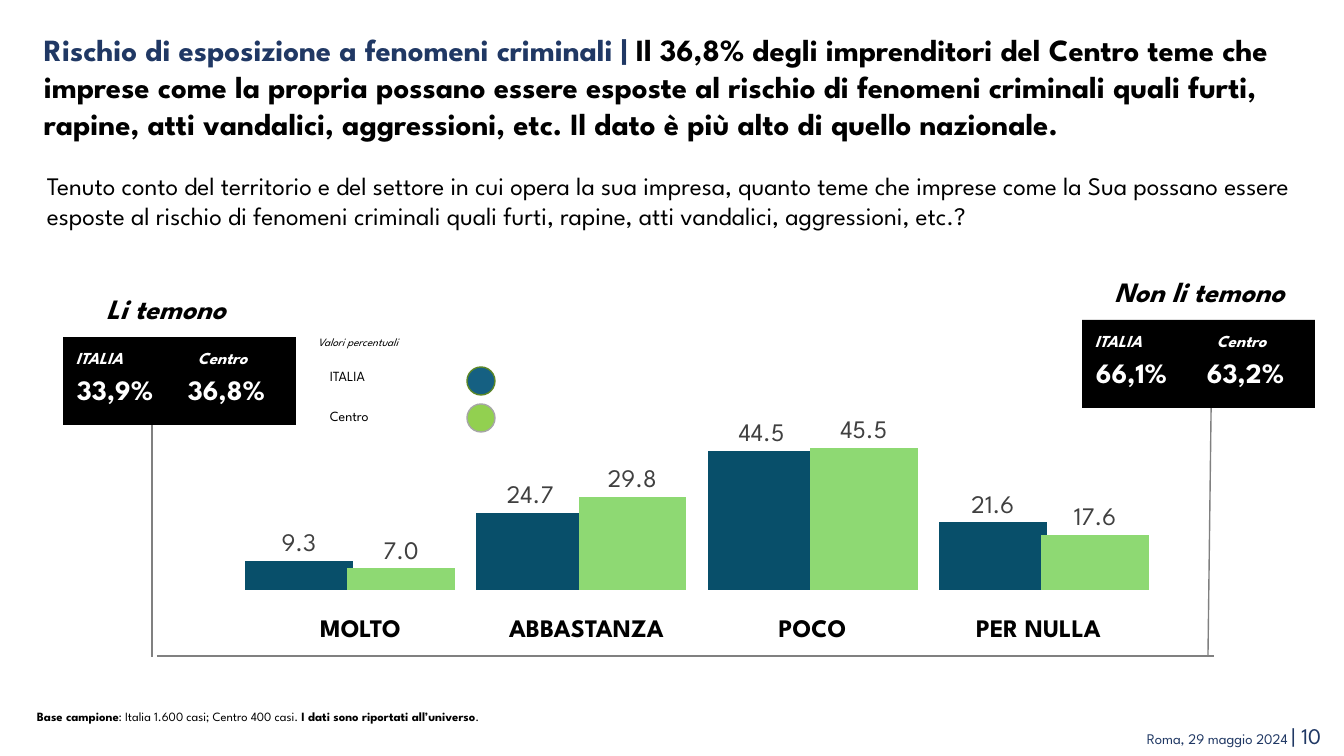
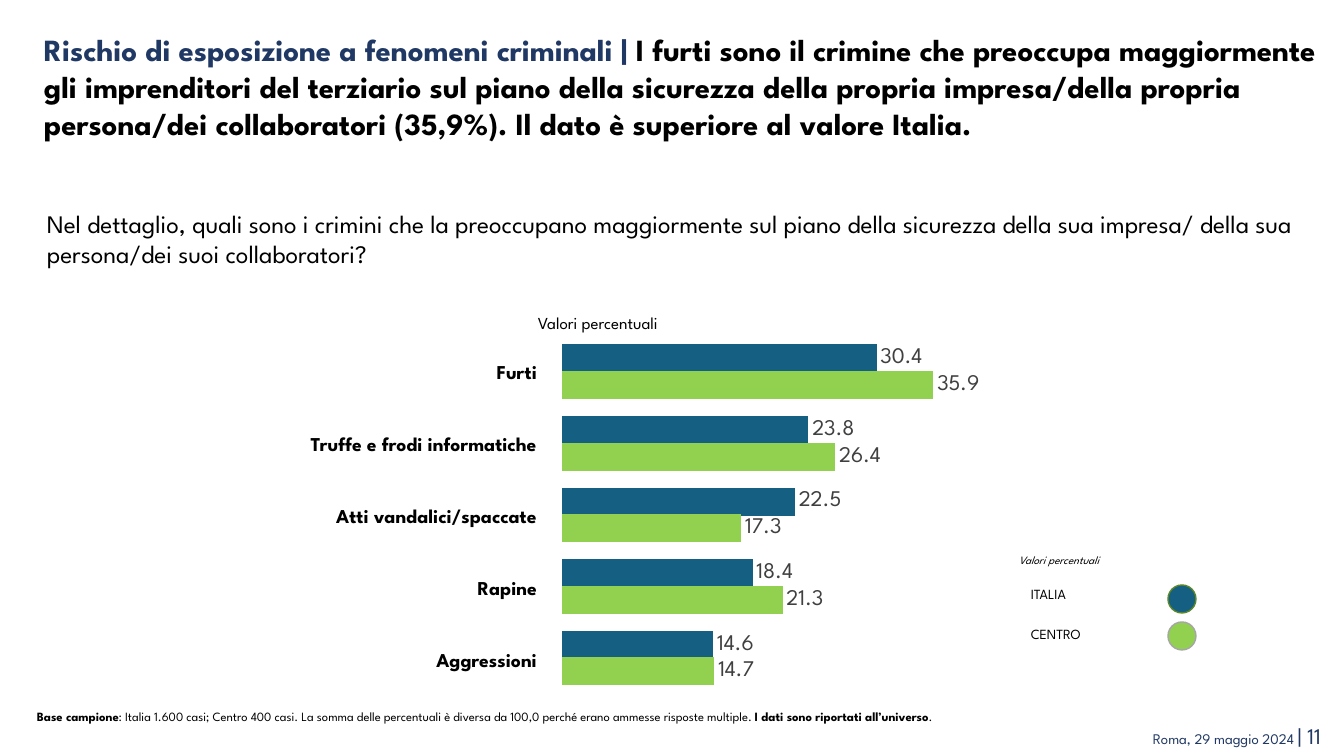
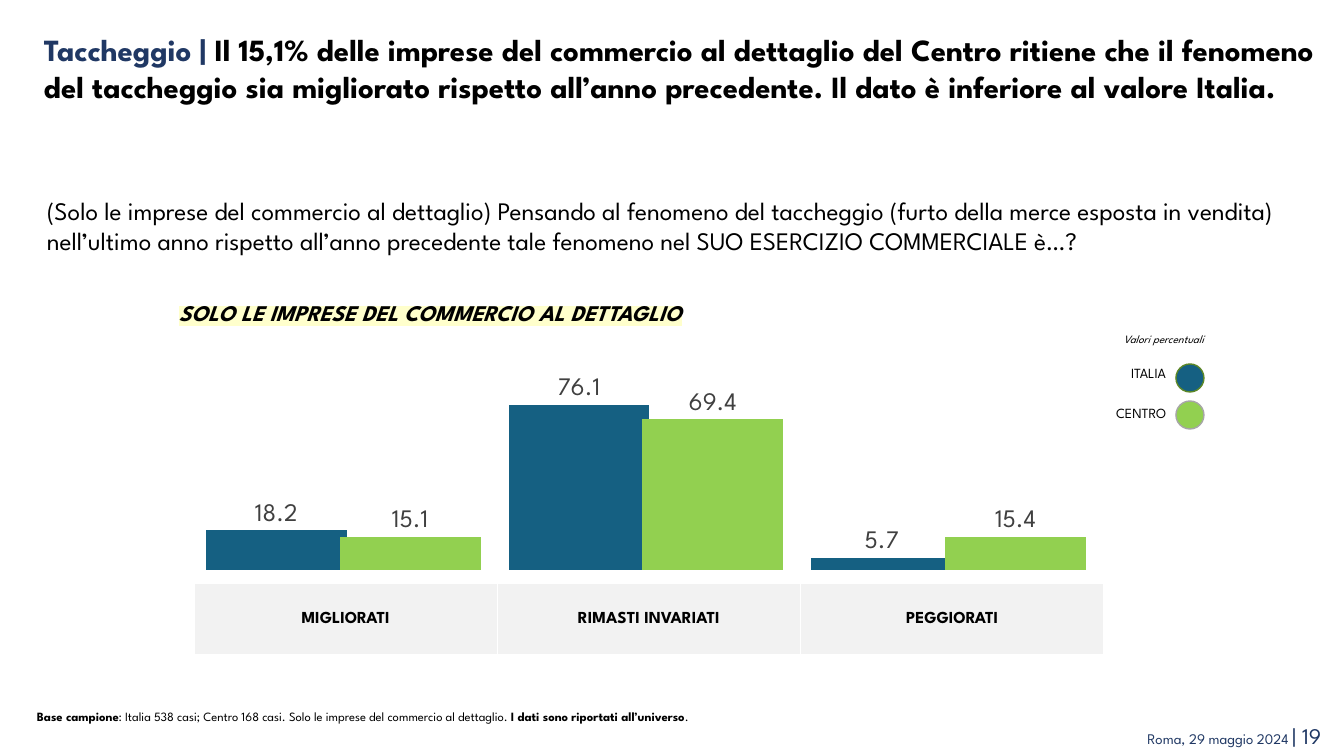
from dataclasses import dataclass

from lxml.etree import SubElement
from pptx import Presentation
from pptx.chart.data import CategoryChartData
from pptx.dml.color import RGBColor
from pptx.enum.chart import XL_CHART_TYPE as ChartType, XL_LABEL_POSITION as LabelPosition
from pptx.enum.shapes import MSO_CONNECTOR as Connector, MSO_SHAPE as Shape
from pptx.enum.text import MSO_ANCHOR as Anchor, PP_ALIGN as Align
from pptx.oxml.ns import qn
from pptx.util import Pt

EMU_PER_PX = 914400 / 100.8


def px(*lengths):
    return [round(length * EMU_PER_PX) for length in lengths]


@dataclass(frozen=True)
class Theme:
    font: str = "League Spartan"
    chart_font: str = "Arial"
    black: str = "000000"
    white: str = "FFFFFF"
    navy: str = "203864"
    rule: str = "808080"
    blue: str = "156082"
    green: str = "92D050"
    deep_blue: str = "084F6A"
    soft_green: str = "8ED973"
    blue_edge: str = "5C8727"
    green_edge: str = "A6A6A6"
    value: str = "404040"
    panel: str = "F2F2F2"
    highlight: str = "FFFFCC"
    title: float = 22
    figure: float = 20
    body: float = 18
    page: float = 16
    row: float = 14
    label: float = 12
    date: float = 10.5
    legend: float = 10
    note: float = 9
    caption: float = 8


class Deck:
    def __init__(self, theme):
        self.theme = theme
        self.presentation = Presentation()
        self.presentation.slide_width, self.presentation.slide_height = px(1344, 756)
        self.slide = None

    # Text
    def style(self, font, size=None, color=None, bold=None, italic=None, name=None):
        if size:
            font.size = Pt(size)
        if color:
            font.color.rgb = RGBColor.from_string(color)
        if bold is not None:
            font.bold = bold
        if italic is not None:
            font.italic = italic
        if name:
            font.name = name

    def fill_text(self, frame, runs, size, color=None, bold=False, italic=False,
                  align=Align.LEFT, spacing=None):
        """Runs are a string or a list of (text, style changes)."""
        paragraph = frame.paragraphs[0]
        paragraph.alignment = align
        if spacing:
            paragraph.line_spacing = spacing
        self.style(paragraph.font, size, color or self.theme.black, bold, italic,
                   self.theme.font)
        for words, changes in [(runs, {})] if isinstance(runs, str) else runs:
            run = paragraph.add_run()
            run.text = words
            self.style(run.font, **changes)
        return paragraph

    def text(self, box, runs, size, insets=None, **look):
        frame = self.slide.shapes.add_textbox(*px(*box)).text_frame
        frame.word_wrap = True
        if insets:
            self.set_insets(frame, *insets)
        return self.fill_text(frame, runs, size, **look)

    def set_insets(self, holder, across, down):
        holder.margin_left = holder.margin_right = px(across)[0]
        holder.margin_top = holder.margin_bottom = px(down)[0]

    def highlighted(self, box, words, size):
        paragraph = self.text(box, words, size, bold=True, italic=True)
        properties = paragraph.runs[0]._r.get_or_add_rPr()
        highlight = SubElement(properties, qn("a:highlight"))
        SubElement(highlight, qn("a:srgbClr"), val=self.theme.highlight)

    # Frame shared by every slide
    def new_slide(self, page, topic, message, question, question_top, sample):
        theme = self.theme
        self.slide = self.presentation.slides.add_slide(self.presentation.slide_layouts[6])
        self.text((37, 27, 1301, 157),
                  [(f"{topic} | ", {"color": theme.navy}), (message, {})],
                  theme.title, insets=(7, 4), bold=True)
        self.text((37, question_top, 1277, 72), question, theme.body)
        self.text((27, 702, 1265, 25),
                  [("Base campione", {"bold": True}), (f": {sample} ", {}),
                   ("I dati sono riportati all’universo", {"bold": True}), (".", {})],
                  theme.note, align=Align.JUSTIFY, spacing=1.1)
        self.text((632, 717, 699, 37),
                  [("Roma, 29 maggio 2024 ", {"size": theme.date}), (f"| {page}", {})],
                  theme.page, color=theme.navy, align=Align.RIGHT)

    # Shapes
    def shape(self, kind, box, fill, edge=None):
        shape = self.slide.shapes.add_shape(kind, *px(*box))
        shape.shadow.inherit = False
        shape.fill.solid()
        shape.fill.fore_color.rgb = RGBColor.from_string(fill)
        if edge:
            shape.line.color.rgb = RGBColor.from_string(edge)
            shape.line.width = Pt(1)
        else:
            shape.line.fill.background()

    def rule(self, *ends):
        line = self.slide.shapes.add_connector(Connector.STRAIGHT, *px(*ends))
        line.line.color.rgb = RGBColor.from_string(self.theme.rule)
        line.line.width = Pt(1)
        SubElement(line._element.spPr, qn("a:effectLst"))

    def legend(self, left, top, second="CENTRO", align=Align.LEFT):
        theme = self.theme
        self.text((left, top, 197, 24), "Valori percentuali", theme.caption,
                  italic=True, align=align)
        entries = (("ITALIA", theme.blue, theme.blue_edge),
                   (second, theme.green, theme.green_edge))
        for index, (name, fill, edge) in enumerate(entries):
            self.text((left + 12, top + 33 + 40 * index, 147, 27), name, theme.legend,
                      align=align)
            self.shape(Shape.OVAL, (left + 159, top + 37 + 37 * index, 28, 28), fill, edge)

    def summary(self, left, top, heading, heading_width, italy, centre):
        theme = self.theme
        self.text((left - 7, top - 54, heading_width, 44), heading, theme.figure,
                  bold=True, italic=True, align=Align.CENTER, spacing=1.1)
        self.shape(Shape.RECTANGLE, (left, top, 233, 88), theme.black)
        columns = (("ITALIA", -31, 135, italy, 4), ("Centro", 79, 161, centre, 115))
        for name, name_left, name_width, figure, figure_left in columns:
            self.text((left + name_left, top + 6, name_width, 32), name, theme.label,
                      color=theme.white, bold=True, italic=True, align=Align.CENTER)
            self.text((left + figure_left, top + 31, 148, 44), figure, theme.figure,
                      color=theme.white, bold=True)

    # Tables
    def table(self, box, rows, size, align, fill=None):
        table = self.slide.shapes.add_table(len(rows), len(rows[0]), *px(*box)).table
        table.first_row = table.horz_banding = False
        for row_index, row in enumerate(rows):
            for column_index, words in enumerate(row):
                cell = table.cell(row_index, column_index)
                self.set_insets(cell, 0, 0)
                cell.vertical_anchor = Anchor.MIDDLE
                self.fill_text(cell.text_frame, words, size, bold=True, align=align)
                if fill:
                    self.white_borders(cell)
                    cell.fill.solid()
                    cell.fill.fore_color.rgb = RGBColor.from_string(fill)
                else:
                    cell.fill.background()

    def white_borders(self, cell):
        properties = cell._tc.get_or_add_tcPr()
        for side, points in (("L", 1), ("R", 1), ("T", 1), ("B", 3)):
            border = SubElement(properties, qn(f"a:ln{side}"), w=str(Pt(points)))
            paint = SubElement(border, qn("a:solidFill"))
            SubElement(paint, qn("a:srgbClr"), val=self.theme.white)

    # Charts
    def chart(self, kind, box, categories, italy, centre, top_value, plot_area, gap, size,
              colors=None):
        theme = self.theme
        data = CategoryChartData(number_format="0.0")
        data.categories = categories
        data.add_series("Italia", italy)
        data.add_series("Centro", centre)
        chart = self.slide.shapes.add_chart(kind, *px(*box), data).chart
        chart.has_legend = chart.has_title = False
        self.style(chart.font, theme.legend, theme.black, name=theme.chart_font)
        chart.category_axis.visible = chart.value_axis.visible = False
        chart.category_axis.reverse_order = kind == ChartType.BAR_CLUSTERED
        chart.value_axis.has_major_gridlines = False
        chart.value_axis.minimum_scale, chart.value_axis.maximum_scale = 0, top_value
        plot = chart.plots[0]
        plot.gap_width, plot.overlap, plot.vary_by_categories = gap, 5, False
        for series, color in zip(plot.series, colors or (theme.blue, theme.green)):
            series.invert_if_negative = False
            series.format.fill.solid()
            series.format.fill.fore_color.rgb = RGBColor.from_string(color)
            labels = series.data_labels
            labels.show_value = True
            labels.position = LabelPosition.OUTSIDE_END
            labels.number_format, labels.number_format_is_linked = "0.0", False
            self.style(labels.font, size, theme.value, name=theme.font)
        self.place_plot(chart, plot_area)

    def place_plot(self, chart, plot_area):
        area = chart._chartSpace.chart.plotArea
        for old in area.findall(qn("c:layout")):
            area.remove(old)
        layout = SubElement(area, qn("c:layout"))
        area.insert(0, layout)
        manual = SubElement(layout, qn("c:manualLayout"))
        settings = [("layoutTarget", "inner"), ("xMode", "edge"), ("yMode", "edge")]
        for tag, value in settings + list(zip("xywh", plot_area)):
            SubElement(manual, qn(f"c:{tag}"), val=str(value))


COLUMN_PLOT = (0.02, 0.18, 0.96, 0.62)
CRIME_TOPIC = "Rischio di esposizione a fenomeni criminali"


def fear_slide(deck):
    theme = deck.theme
    deck.new_slide(
        10, CRIME_TOPIC,
        "Il 36,8% degli imprenditori del Centro teme che imprese come la propria possano "
        "essere esposte al rischio di fenomeni criminali quali furti, rapine, atti vandalici, "
        "aggressioni, etc. Il dato è più alto di quello nazionale.",
        "Tenuto conto del territorio e del settore in cui opera la sua impresa, quanto teme "
        "che imprese come la Sua possano essere esposte al rischio di fenomeni criminali "
        "quali furti, rapine, atti vandalici, aggressioni, etc.?",
        165, "Italia 1.600 casi; Centro 400 casi.")
    # Bracket joining the two summaries
    deck.rule(1212, 340, 1208, 657)
    deck.rule(152, 340, 152, 657)
    deck.rule(157, 656, 1214, 656)
    deck.summary(63, 337, "Li temono", 220, "33,9%", "36,8%")
    deck.summary(1082, 320, "Non li temono", 249, "66,1%", "63,2%")
    deck.legend(308, 330, second="Centro")
    answers = ("MOLTO", "ABBASTANZA", "POCO", "PER NULLA")
    deck.chart(ChartType.COLUMN_CLUSTERED, (215, 388, 964, 253), answers,
               (9.3, 24.7, 44.5, 21.6), (7.0, 29.8, 45.5, 17.6), 50, COLUMN_PLOT, 20,
               theme.body, colors=(theme.deep_blue, theme.soft_green))
    for index, answer in enumerate(answers):
        deck.text((244 + 226 * index, 604, 233, 41), answer, theme.body, bold=True,
                  align=Align.CENTER, spacing=1.1)


def crimes_slide(deck):
    theme = deck.theme
    deck.new_slide(
        11, CRIME_TOPIC,
        "I furti sono il crimine che preoccupa maggiormente gli imprenditori del terziario "
        "sul piano della sicurezza della propria impresa/della propria persona/dei "
        "collaboratori (35,9%). Il dato è superiore al valore Italia.",
        "Nel dettaglio, quali sono i crimini che la preoccupano maggiormente sul piano della "
        "sicurezza della sua impresa/ della sua persona/dei suoi collaboratori?",
        203, "Italia 1.600 casi; Centro 400 casi. La somma delle percentuali è diversa da "
        "100,0 perché erano ammesse risposte multiple.")
    crimes = ("Furti", "Truffe e frodi informatiche", "Atti vandalici/spaccate", "Rapine",
              "Aggressioni")
    deck.chart(ChartType.BAR_CLUSTERED, (500, 302, 780, 426), crimes,
               (30.4, 23.8, 22.5, 18.4, 14.6), (35.9, 26.4, 17.3, 21.3, 14.7), 40,
               (0.08, 0.08, 0.53, 0.84), 60, theme.page)
    deck.table((148, 339, 389, 360), [(crime,) for crime in crimes], theme.row, Align.RIGHT)
    deck.text((528, 308, 217, 30), "Valori percentuali", theme.label)
    deck.legend(1009, 548)


def shoplifting_slide(deck):
    theme = deck.theme
    deck.new_slide(
        19, "Taccheggio",
        "Il 15,1% delle imprese del commercio al dettaglio del Centro ritiene che il fenomeno "
        "del taccheggio sia migliorato rispetto all’anno precedente. Il dato è inferiore al "
        "valore Italia.",
        "(Solo le imprese del commercio al dettaglio) Pensando al fenomeno del taccheggio "
        "(furto della merce esposta in vendita) nell’ultimo anno rispetto all’anno precedente "
        "tale fenomeno nel SUO ESERCIZIO COMMERCIALE è…?",
        190, "Italia 538 casi; Centro 168 casi. Solo le imprese del commercio al dettaglio.")
    trends = ("MIGLIORATI", "RIMASTI INVARIATI", "PEGGIORATI")
    deck.table((194, 583, 910, 73), [trends], theme.label, Align.CENTER, fill=theme.panel)
    deck.highlighted((169, 294, 763, 35), "SOLO LE IMPRESE DEL COMMERCIO AL DETTAGLIO",
                     theme.page)
    deck.legend(1017, 327, align=Align.RIGHT)
    deck.chart(ChartType.COLUMN_CLUSTERED, (173, 346, 946, 280), trends,
               (18.2, 76.1, 5.7), (15.1, 69.4, 15.4), 80, COLUMN_PLOT, 20, theme.body)


def main():
    deck = Deck(Theme())
    fear_slide(deck)
    crimes_slide(deck)
    shoplifting_slide(deck)
    deck.presentation.save("out.pptx")


if __name__ == "__main__":
    main()
